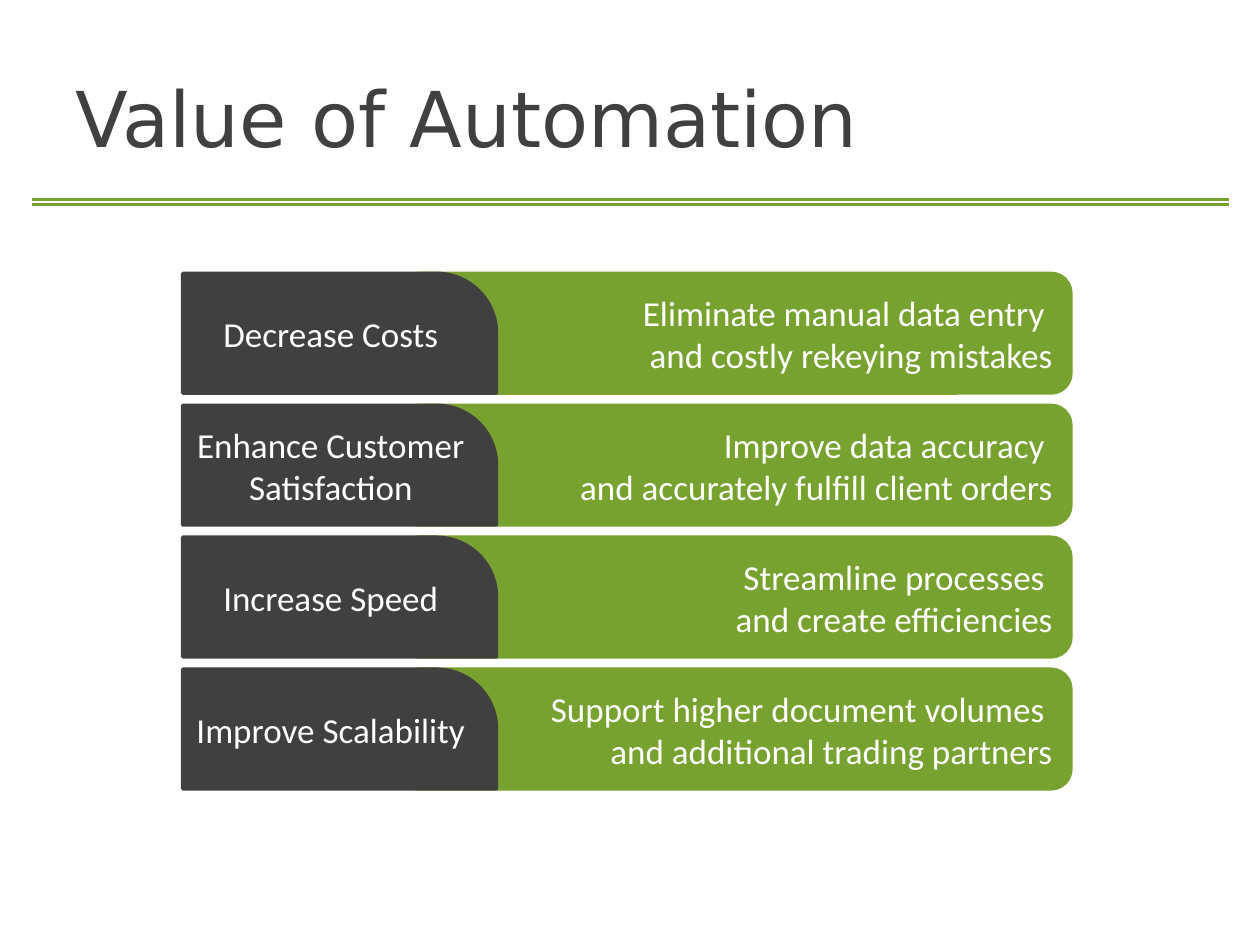
from pptx import Presentation
from pptx.dml.color import RGBColor
from pptx.enum.shapes import MSO_CONNECTOR, MSO_SHAPE
from pptx.enum.text import MSO_ANCHOR, PP_ALIGN
from pptx.oxml.ns import qn
from pptx.util import Pt

STRAIGHT = MSO_CONNECTOR.STRAIGHT
ROUNDED = MSO_SHAPE.ROUNDED_RECTANGLE
ONE_ROUND_CORNER = MSO_SHAPE.ROUND_1_RECTANGLE
MIDDLE = MSO_ANCHOR.MIDDLE
LEFT, CENTER, RIGHT = PP_ALIGN.LEFT, PP_ALIGN.CENTER, PP_ALIGN.RIGHT

COLORS = {"green": "78A22F", "charcoal": "404040", "white": "FFFFFF"}

VALUES = [
    ("Decrease Costs",
     ["Eliminate manual data entry ", "and costly rekeying mistakes"]),
    ("Enhance Customer Satisfaction",
     ["Improve data accuracy ", "and accurately fulfill client orders"]),
    ("Increase Speed",
     ["Streamline processes ", "and create efficiencies"]),
    ("Improve Scalability",
     ["Support higher document volumes ", "and additional trading partners"]),
]
FIRST_TOP, ROW_PITCH, ROW_HEIGHT = 156.2, 75.4, 68.4


def color(name):
    return RGBColor.from_string(COLORS[name])


def write_lines(frame, lines, align, font, size, ink):
    frame.word_wrap = True
    frame.vertical_anchor = MIDDLE
    for index, line in enumerate(lines):
        paragraph = frame.add_paragraph() if index else frame.paragraphs[0]
        paragraph.alignment = align
        run = paragraph.add_run()
        run.text = line
        run.font.name = font
        run.font.size = Pt(size)
        run.font.color.rgb = color(ink)


def add_title(slide, wording):
    title = slide.shapes.add_textbox(Pt(36), Pt(21.6), Pt(648), Pt(90))
    write_lines(title.text_frame, [wording], LEFT, "DejaVu Sans", 44, "charcoal")


def add_rule(slide, y):
    rule = slide.shapes.add_connector(STRAIGHT, Pt(18), Pt(y), Pt(702), Pt(y))
    rule.line.color.rgb = color("green")
    rule.line.width = Pt(1.5)
    properties = rule._element.spPr
    properties.append(properties.makeelement(qn("a:effectLst"), {}))


def add_panel(slide, outline, left, top, width, shade, lines, align):
    panel = slide.shapes.add_shape(
        outline, Pt(left), Pt(top), Pt(width), Pt(ROW_HEIGHT))
    panel.shadow.inherit = False
    panel.fill.solid()
    panel.fill.fore_color.rgb = color(shade)
    panel.line.color.rgb = color(shade)
    panel.line.width = Pt(2)
    write_lines(panel.text_frame, lines, align, "Calibri", 20, "white")
    return panel


def add_value_row(slide, top, goal, benefit):
    add_panel(slide, ROUNDED, 228.2, top, 383.8, "green", benefit, RIGHT)
    goal_tab = add_panel(
        slide, ONE_ROUND_CORNER, 104.4, top, 179.3, "charcoal", [goal], CENTER)
    goal_tab.adjustments[0] = 0.5


def main():
    deck = Presentation()
    deck.slide_width, deck.slide_height = Pt(720), Pt(540)
    slide = deck.slides.add_slide(deck.slide_layouts[6])
    for y in (114, 116.8):
        add_rule(slide, y)
    add_title(slide, "Value of Automation")
    for row, (goal, benefit) in enumerate(VALUES):
        add_value_row(slide, FIRST_TOP + row * ROW_PITCH, goal, benefit)
    deck.save("out.pptx")


if __name__ == "__main__":
    main()
